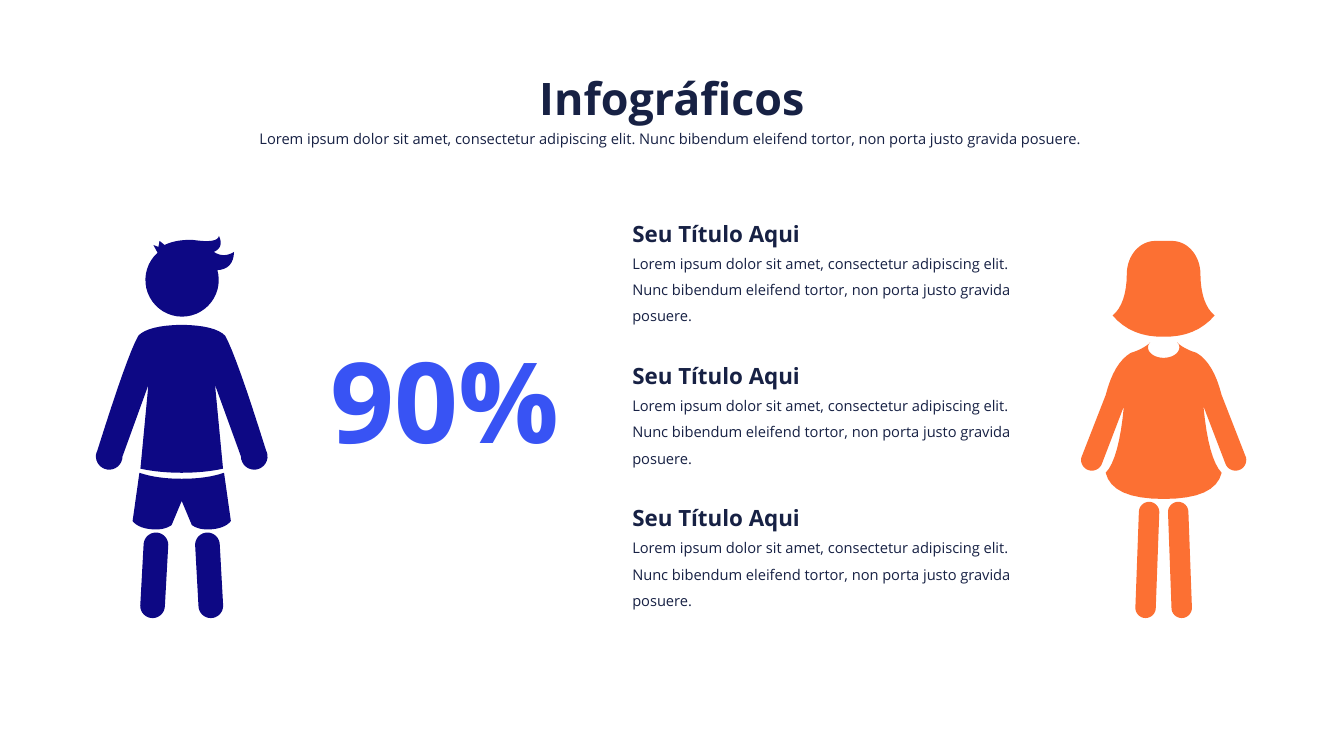
"""Builds an infographic slide with a boy, a girl, a percentage and three text sections."""
from math import cos, radians, sin

from pptx import Presentation
from pptx.dml.color import RGBColor
from pptx.enum.text import MSO_AUTO_SIZE, PP_ALIGN
from pptx.util import Pt

NAVY = RGBColor(0x17, 0x21, 0x44)
BLUE = RGBColor(0x38, 0x53, 0xF4)
INDIGO = RGBColor(0x0D, 0x08, 0x84)
ORANGE = RGBColor(0xFC, 0x70, 0x33)

BOY_AXIS = 129.8
GIRL_AXIS = 831.2
SECTION_TOP, SECTION_STEP = 153.4, 101.6
LOREM = ("Lorem ipsum dolor sit amet, consectetur adipiscing elit. "
         "Nunc bibendum eleifend tortor, non porta justo gravida posuere.")


def arc(center, radius_x, radius_y, first, last, steps=16):
    """Return points along an ellipse, in degrees clockwise from the right."""
    angles = [radians(first + (last - first) * i / steps) for i in range(steps + 1)]
    return [(center[0] + radius_x * cos(a), center[1] + radius_y * sin(a)) for a in angles]


def curve(start, *bends, steps=8):
    """Return points along joined quadratic curves, each bend a (control, end) pair."""
    points = [start]
    for control, end in bends:
        for t in [i / steps for i in range(1, steps + 1)]:
            points.append(tuple((1 - t) ** 2 * a + 2 * t * (1 - t) * b + t ** 2 * c
                                for a, b, c in zip(start, control, end)))
        start = end
    return points


def capsule(top, bottom, radius):
    """Return a limb with round ends."""
    return arc(top, radius, radius, 180, 360) + arc(bottom, radius, radius, 0, 180)


def mirrored(outline):
    """Return the outline reflected in the figure's axis."""
    return [(-x, y) for x, y in outline]


def whole(half):
    """Complete a right half that starts and ends on the axis."""
    return half + mirrored(half[-2:0:-1])


def boy_parts():
    """Return the boy's outlines, with x measured from his axis."""
    shoulder_and_sleeve = curve((0, 232), ((24, 232.5), (31, 239.8)), ((39, 254), (60.5, 322.6)))
    hand = arc((51.8, 326), 9.5, 9.5, -20, 180)
    armpit = [(23.8, 275)]
    shirt_hem = curve((29.5, 334.8), ((16, 337.7), (0, 337.7)))
    shirt = whole(shoulder_and_sleeve + hand + armpit + shirt_hem)

    face = arc((0.3, 200), 26.2, 26.2, -16, 228, steps=32)
    tufts = [(-20.2, 175), (-16.6, 176.4), (-15.8, 172.1)]
    fringe = curve((-12.2, 175), ((-4, 171), (8, 171.4)), ((26, 174), (26.6, 168.5)))
    locks = curve((26.6, 168.5), ((30.5, 176.5), (23, 180)),
                  ((30, 184.5), (37.4, 180)), ((37, 192.5), (25.2, 193)))
    head = face + tufts + fringe + locks

    waist = curve((0, 342), ((18, 342), (30.2, 337.7)))
    cuff = curve((35.1, 372.2), ((30.5, 378), (18.5, 378.2)), ((11.5, 378.2), (7.2, 375)))
    crotch = [(0, 357.8)]
    shorts = whole(waist + cuff + crotch)

    leg = capsule((18.4, 389.2), (20.8, 432.7), 8.8)
    return [shirt, head, shorts, mirrored(leg), leg]


def girl_parts():
    """Return the girl's outlines, with x measured from her axis."""
    crown = [(0, 172.1)] + arc((6, 195.8), 20.3, 23.7, -90, 0)
    flare_and_tips = curve((26.3, 195.8), ((26.5, 217), (36.4, 225.4)), ((23, 241), (0, 240.5)))
    hair = whole(crown + flare_and_tips)

    leg = capsule((10.4, 365.8), (12.9, 434.2), 7.3)

    collar = arc((0, 248.1), 11.2, 7.5, 90, -26)
    shoulder = curve((9.7, 244.8), ((15, 249.5), (23.4, 252)), ((35.5, 259), (41.4, 282.2)))
    hand = arc((51.3, 328.5), 7.7, 7.7, -12, 160)
    skirt = curve((28.4, 290.2), ((32, 328), (41.4, 337.7)), ((37, 356.4), (0, 356.4)))
    dress = whole(collar + shoulder + hand + skirt)
    return [hair, mirrored(leg), leg, dress]


class InfographicSlide:
    """Holds the font and the current slide, and draws its elements."""

    def __init__(self, slide, font="Open Sans"):
        self.slide = slide
        self.font = font

    def figure(self, axis, color, outlines):
        """Draw one person as a group of filled outlines."""
        person = self.slide.shapes.add_group_shape()
        for outline in outlines:
            points = [(Pt(axis + x), Pt(y)) for x, y in outline]
            builder = person.shapes.build_freeform(*points[0])
            builder.add_line_segments(points[1:], close=True)
            part = builder.convert_to_shape()
            part.shadow.inherit = False
            part.fill.solid()
            part.fill.fore_color.rgb = color
            part.line.fill.background()

    def text(self, wording, left, top, width, height, size, color=NAVY, bold=False,
             align=PP_ALIGN.LEFT, spacing=None):
        """Write one paragraph in a text box."""
        box = self.slide.shapes.add_textbox(Pt(left), Pt(top), Pt(width), Pt(height))
        frame = box.text_frame
        frame.word_wrap = True
        frame.auto_size = MSO_AUTO_SIZE.SHAPE_TO_FIT_TEXT
        frame.text = wording
        paragraph = frame.paragraphs[0]
        paragraph.alignment = align
        paragraph.line_spacing = spacing
        font = paragraph.runs[0].font
        font.name = self.font
        font.size = Pt(size)
        font.bold = bold
        font.color.rgb = color

    def section(self, top):
        """Write a heading with its body text below."""
        self.text("Seu Título Aqui", 444.6, top, 291, 26.6, 16, bold=True)
        self.text(LOREM, 444.6, top + 18.5, 291, 65, 10.5, spacing=1.5)


def main():
    """Build and save the slide."""
    presentation = Presentation()
    presentation.slide_width = Pt(960)
    presentation.slide_height = Pt(540)
    page = InfographicSlide(presentation.slides.add_slide(presentation.slide_layouts[6]))

    page.figure(BOY_AXIS, INDIGO, boy_parts())
    page.figure(GIRL_AXIS, ORANGE, girl_parts())
    page.text("90%", 224.2, 233.3, 187.2, 104.4, 80, BLUE, True, PP_ALIGN.CENTER)
    for row in range(3):
        page.section(SECTION_TOP + row * SECTION_STEP)
    page.text("Infográficos", 28, 46.8, 904, 46, 32, bold=True, align=PP_ALIGN.CENTER)
    page.text(LOREM, 27, 82.8, 904, 26.6, 10.5, align=PP_ALIGN.CENTER, spacing=1.5)

    presentation.save("out.pptx")


if __name__ == "__main__":
    main()
